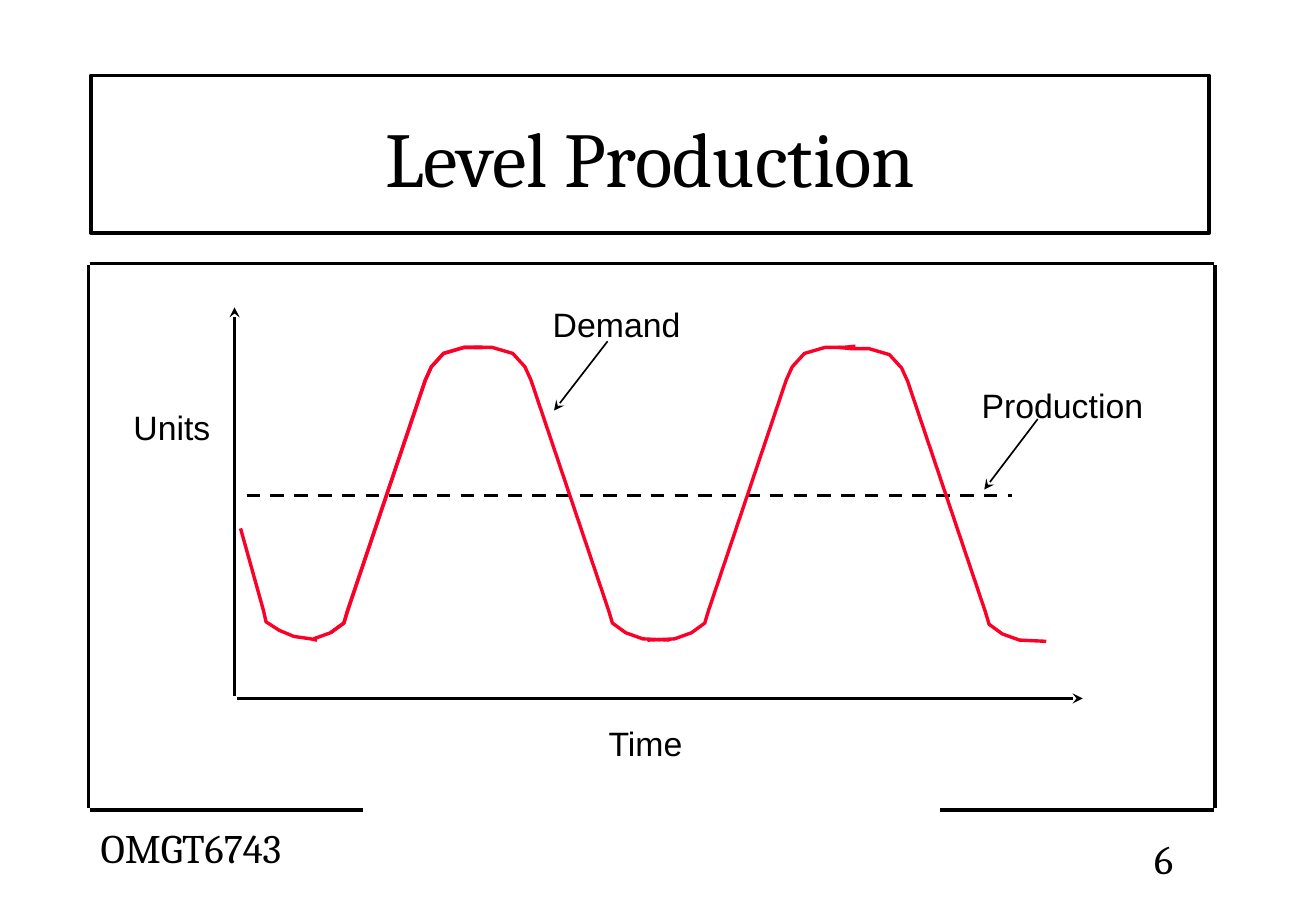
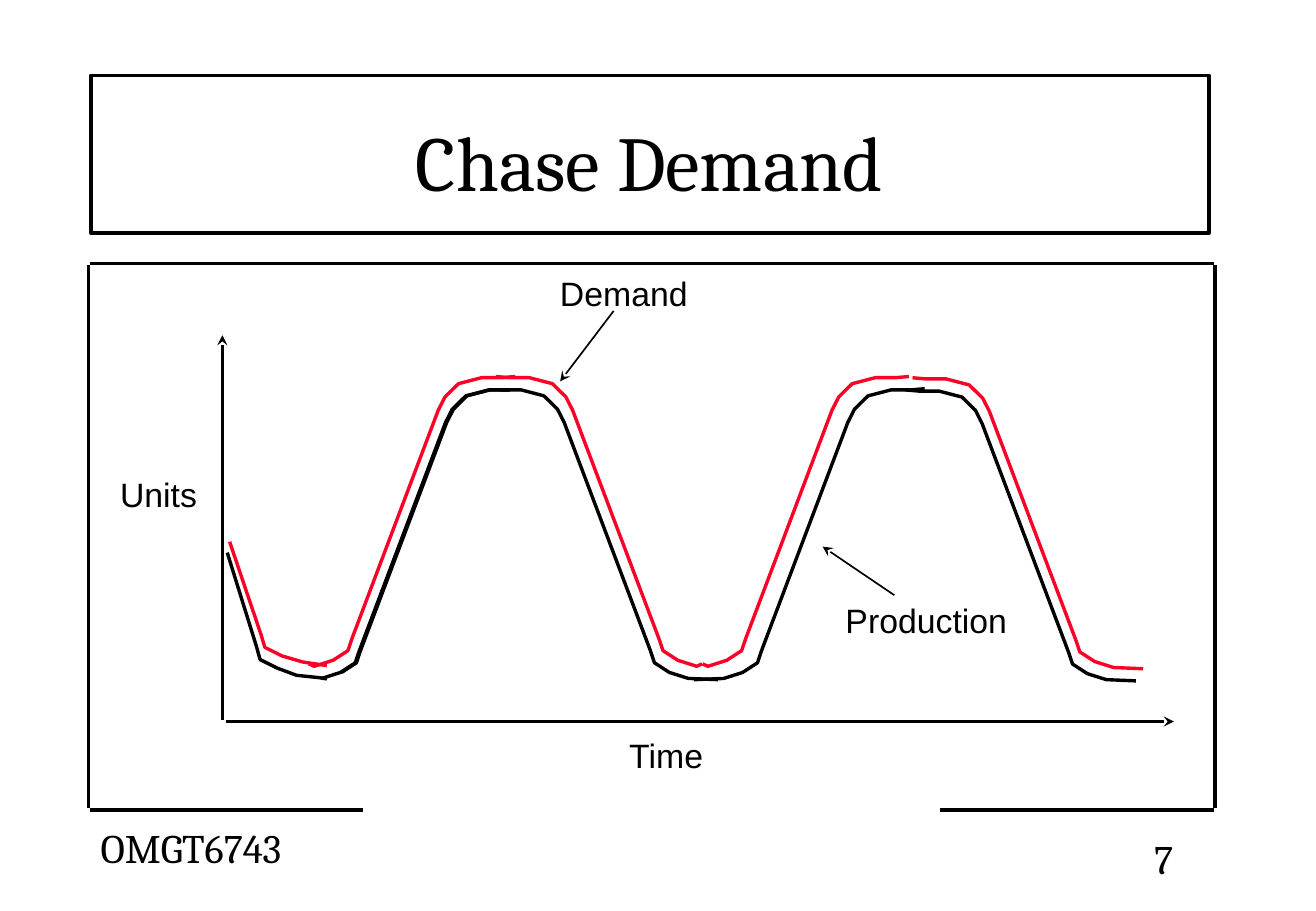
from pptx import Presentation
from pptx.dml.color import RGBColor
from pptx.enum.dml import MSO_LINE
from pptx.enum.shapes import MSO_CONNECTOR, MSO_SHAPE
from pptx.enum.text import MSO_ANCHOR, PP_ALIGN
from pptx.oxml.xmlchemy import OxmlElement
from pptx.util import Inches, Pt

COLORS = {"black": "000000", "demand": "FC0128"}
TITLE_FONT, LABEL_FONT = "Cambria", "Arial"
COURSE = "OMGT6743"

TITLE_FRAME = (0.75, 0.62, 9.2, 1.3)
BODY_FRAME = [
    (0.74, 2.17, 9.99, 2.17),
    (0.73, 2.18, 0.73, 6.65),
    (10, 2.18, 10, 6.65),
    (0.74, 6.67, 2.99, 6.67),
    (7.74, 6.67, 9.99, 6.67),
]

CREST_TO_TROUGH = [
    (0, 0), (0.1, 0.01), (0.25, 0.01), (0.42, 0.06), (0.52, 0.17), (0.57, 0.28),
    (1.21, 2.18), (1.24, 2.28), (1.35, 2.36), (1.49, 2.41), (1.71, 2.42),
]
TROUGH_HOOK = (1.53, 2.39)
LEFT, RIGHT = -1, 1

# SLIDES_PLACEHOLDER
SLIDES = [
    {
        "title": "Level Production",
        "title_box": (0.75, 0.64, 9.2, 1.3),
        "number": 6,
        "axes": [(1.93, 5.73, 1.93, 2.53), (1.95, 5.75, 8.91, 5.75)],
        "pointers": [(5, 2.81, 4.56, 3.38), (8.54, 3.45, 8.1, 4.03)],
        "level_line": (2.03, 4.08, 8.33, 4.08),
        "labels": [
            ("Time", 4.91, 5.9, 1.17),
            ("Production", 7.98, 3.12, 1.76),
            ("Demand", 4.45, 2.45, 1.95),
            ("Units", 1, 3.3, 0.93),
        ],
        "curves": [
            {
                "color": "demand", "stretch": (1, 1),
                "opening": [(1.98, 4.35), (2.17, 5.03), (2.19, 5.12), (2.3, 5.19),
                            (2.42, 5.24), (2.56, 5.26), (2.61, 5.27)],
                "waves": [(7.04, 2.85, LEFT, 0, 10), (4.07, 2.85, LEFT, 1, 9),
                          (3.8, 2.85, RIGHT, 1, 10), (6.9, 2.86, RIGHT, 0, 10),
                          (4.07, 2.85, LEFT, 1, 8)],
            },
        ],
    },
    {
        "title": "Chase Demand",
        "title_box": (0.83, 0.67, 9.03, 1.3),
        "number": 7,
        "axes": [(1.83, 5.93, 1.83, 2.76), (1.86, 5.94, 9.66, 5.94)],
        "pointers": [(5.05, 2.56, 4.61, 3.14), (7.36, 4.9, 6.77, 4.5)],
        "level_line": None,
        "labels": [
            ("Time", 5.08, 6, 0.92),
            ("Units", 0.89, 3.85, 0.86),
            ("Production", 6.86, 4.89, 1.76),
            ("Demand", 4.51, 2.2, 1.95),
        ],
        "curves": [
            {
                "color": "demand", "stretch": (1.11, 0.99),
                "opening": [(1.89, 4.46), (2.15, 5.23), (2.18, 5.33), (2.32, 5.4),
                            (2.49, 5.45), (2.69, 5.48)],
                "waves": [(7.48, 3.1, LEFT, 0, "hook"), (7.51, 3.11, RIGHT, 0, 10),
                          (4.08, 3.1, RIGHT, 0, "hook"), (4.24, 3.1, LEFT, 0, "hook")],
            },
            {
                "color": "black", "stretch": (1.11, 0.99),
                "opening": [(1.87, 4.55), (2.11, 5.32), (2.14, 5.43), (2.28, 5.5),
                            (2.44, 5.56), (2.63, 5.58), (2.69, 5.59)],
                "waves": [(7.61, 3.2, LEFT, 0, 10), (4.3, 3.2, LEFT, 1, 9),
                          (4.01, 3.2, RIGHT, 1, 10), (7.45, 3.21, RIGHT, 0, 10),
                          (4.31, 3.2, LEFT, 1, 8)],
            },
        ],
    },
]


def style_line(line, color="black", width=2):
    line.color.rgb = RGBColor.from_string(COLORS[color])
    line.width = Pt(width)


def style_text(text_frame, text, font_name, size):
    text_frame.word_wrap = True
    text_frame.text = text
    font = text_frame.paragraphs[0].runs[0].font
    font.name, font.size = font_name, Pt(size)
    font.color.rgb = RGBColor.from_string(COLORS["black"])


def add_text(slide, text, left, top, width, height, font_name, size):
    box = slide.shapes.add_textbox(*map(Inches, (left, top, width, height)))
    style_text(box.text_frame, text, font_name, size)


def add_line(slide, ends, width=2, arrow=False, dash=None):
    connector = slide.shapes.add_connector(MSO_CONNECTOR.STRAIGHT, *map(Inches, ends))
    style_line(connector.line, width=width)
    if dash:
        connector.line.dash_style = dash
    if arrow:
        tip = OxmlElement("a:tailEnd")
        tip.set("type", "stealth")
        connector.line._get_or_add_ln().append(tip)
    connector._element.spPr.append(OxmlElement("a:effectLst"))


def add_stroke(slide, points, color):
    start, *others = [(Inches(x), Inches(y)) for x, y in points]
    builder = slide.shapes.build_freeform(*start)
    builder.add_line_segments(others, close=False)
    shape = builder.convert_to_shape()
    shape.shadow.inherit = False
    shape.fill.background()
    style_line(shape.line, color)


def wave_points(wave, stretch):
    crest_x, crest_y, direction, first, last = wave
    if last == "hook":
        profile = CREST_TO_TROUGH[first:10] + [TROUGH_HOOK]
    else:
        profile = CREST_TO_TROUGH[first:last + 1]
    return [(crest_x + direction * stretch[0] * x, crest_y + stretch[1] * y)
            for x, y in profile]


def add_frame(slide, content):
    for ends in BODY_FRAME:
        add_line(slide, ends)
    add_text(slide, str(content["number"]), 9.4, 6.82, 0.59, 0.5, TITLE_FONT, 24)
    add_text(slide, COURSE, 0.73, 6.73, 1.86, 0.5, TITLE_FONT, 24)
    frame = slide.shapes.add_shape(MSO_SHAPE.RECTANGLE, *map(Inches, TITLE_FRAME))
    frame.shadow.inherit = False
    frame.fill.background()
    style_line(frame.line)


def add_title(slide, content):
    title = slide.shapes.title
    title.left, title.top, title.width, title.height = map(Inches, content["title_box"])
    style_text(title.text_frame, content["title"], TITLE_FONT, 46)
    title.text_frame.vertical_anchor = MSO_ANCHOR.MIDDLE
    title.text_frame.paragraphs[0].alignment = PP_ALIGN.CENTER


def add_diagram(slide, content):
    for ends in content["axes"]:
        add_line(slide, ends, arrow=True)
    if content["level_line"]:
        add_line(slide, content["level_line"], dash=MSO_LINE.DASH)
    for curve in content["curves"]:
        add_stroke(slide, curve["opening"], curve["color"])
        for wave in curve["waves"]:
            add_stroke(slide, wave_points(wave, curve["stretch"]), curve["color"])
    for text, left, top, width in content["labels"]:
        add_text(slide, text, left, top, width, 0.43, LABEL_FONT, 20)
    for ends in content["pointers"]:
        add_line(slide, ends, width=1, arrow=True)


def main():
    presentation = Presentation()
    presentation.slide_width, presentation.slide_height = Inches(10.83), Inches(7.5)
    for content in SLIDES:
        slide = presentation.slides.add_slide(presentation.slide_layouts[5])
        add_frame(slide, content)
        add_title(slide, content)
        add_diagram(slide, content)
    presentation.save("out.pptx")


if __name__ == "__main__":
    main()
